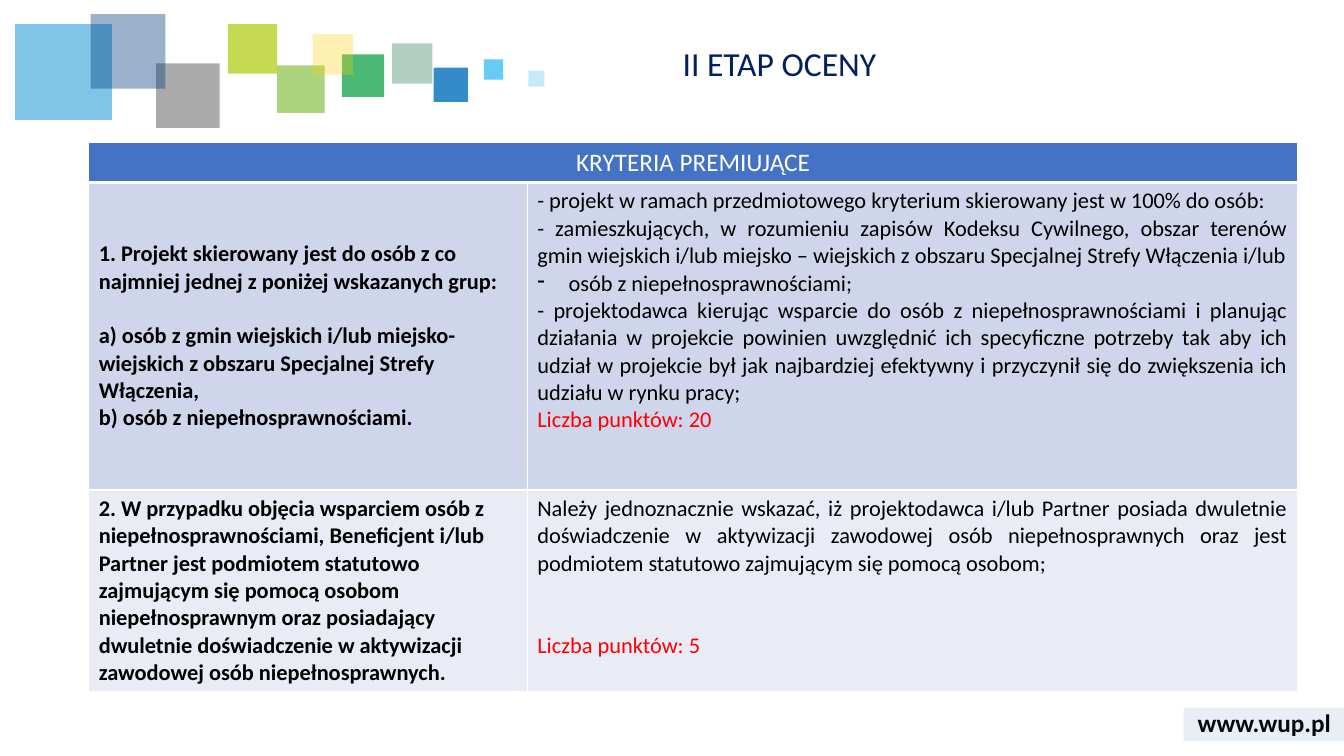
"""Build the slide on the bonus criteria of the second assessment stage."""
from dataclasses import dataclass

from lxml import etree
from pptx import Presentation
from pptx import util as u
from pptx.dml.color import RGBColor
from pptx.enum import shapes, text
from pptx.oxml import ns

FONT = "Calibri"
COLOURS = {
    "black": "000000", "white": "FFFFFF", "red": "FF0000", "title": "002060",
    "header": "4472C4", "band_dark": "CFD5EA", "band_light": "E9EBF5",
    "footer": "2F5597", "pine": "006138", "blue": "006EB9", "green": "009A3C",
    "azure": "028BD3", "leaf": "75B82A", "grey": "575757", "navy": "003D7C",
    "sky": "40C0F1", "lime": "AFCA0B", "yellow": "FED000",
}
LEFT, CENTER, JUSTIFY = text.PP_ALIGN.LEFT, text.PP_ALIGN.CENTER, text.PP_ALIGN.JUSTIFY
TOP, MIDDLE = text.MSO_ANCHOR.TOP, text.MSO_ANCHOR.MIDDLE
BLANK_LINE = 19.5


@dataclass
class Block:
    """A translucent rectangle, with lengths in inches and opacity in percent."""
    left: float
    top: float
    width: float
    height: float
    colour: str
    opacity: int


@dataclass
class Line:
    """A paragraph in one style."""
    words: str
    size: float = 16
    colour: str = "black"
    bold: bool = False
    align: text.PP_ALIGN = JUSTIFY
    before: float = 0
    spacing: float = 1.0
    bullet: str = ""


@dataclass
class Criterion:
    """A table row with its name, its explanation and its look."""
    height: float
    fill: str
    name: list[Line]
    details: list[Line]


BLOCKS = [
    Block(3.89, 0.43, 0.4, 0.4, "pine", 30),
    Block(4.3, 0.67, 0.34, 0.34, "blue", 80),
    Block(3.39, 0.54, 0.42, 0.42, "green", 70),
    Block(0.15, 0.24, 0.96, 0.95, "azure", 50),
    Block(2.75, 0.65, 0.47, 0.47, "leaf", 60),
    Block(1.55, 0.63, 0.63, 0.64, "grey", 50),
    Block(0.9, 0.14, 0.74, 0.74, "navy", 40),
    Block(4.8, 0.59, 0.19, 0.2, "sky", 80),
    Block(2.26, 0.24, 0.49, 0.49, "lime", 70),
    Block(3.1, 0.34, 0.4, 0.4, "yellow", 30),
    Block(5.24, 0.7, 0.16, 0.16, "sky", 30),
    Block(11.74, 7.02, 1.6, 0.33, "footer", 10),
]
CRITERIA = [
    Criterion(3.05, "band_dark", [
        Line("1. Projekt skierowany jest do osób z co najmniej jednej z poniżej "
             "wskazanych grup:", bold=True, align=LEFT),
        Line("a) osób z gmin wiejskich i/lub miejsko-wiejskich z obszaru Specjalnej "
             "Strefy Włączenia,", bold=True, align=LEFT, before=BLANK_LINE),
        Line("b) osób z niepełnosprawnościami.", bold=True, align=LEFT),
    ], [
        Line("- projekt w ramach przedmiotowego kryterium skierowany jest w 100% do osób:"),
        Line("- zamieszkujących, w rozumieniu zapisów Kodeksu Cywilnego, obszar terenów "
             "gmin wiejskich i/lub miejsko – wiejskich z obszaru Specjalnej Strefy "
             "Włączenia i/lub"),
        Line("osób z niepełnosprawnościami;", bullet="-"),
        Line("- projektodawca kierując wsparcie do osób z niepełnosprawnościami i planując "
             "działania w projekcie powinien uwzględnić ich specyficzne potrzeby tak aby "
             "ich udział w projekcie był jak najbardziej efektywny i przyczynił się do "
             "zwiększenia ich udziału w rynku pracy;"),
        Line("Liczba punktów: 20", colour="red"),
    ]),
    Criterion(2.0, "band_light", [
        Line("2. W przypadku objęcia wsparciem osób z niepełnosprawnościami, Beneficjent "
             "i/lub Partner jest podmiotem statutowo zajmującym się pomocą osobom "
             "niepełnosprawnym oraz posiadający dwuletnie doświadczenie w aktywizacji "
             "zawodowej osób niepełnosprawnych.", bold=True, align=LEFT),
    ], [
        Line("Należy jednoznacznie wskazać, iż projektodawca i/lub Partner posiada "
             "dwuletnie doświadczenie w aktywizacji zawodowej osób niepełnosprawnych oraz "
             "jest podmiotem statutowo zajmującym się pomocą osobom;"),
        Line("Liczba punktów: 5", colour="red", before=2 * BLANK_LINE),
    ]),
]


def rgb(name: str) -> RGBColor:
    """Return the named colour."""
    return RGBColor.from_string(COLOURS[name])


def write(frame, lines: list[Line], anchor: text.MSO_ANCHOR = TOP) -> None:
    """Write the lines into a text frame."""
    frame.word_wrap = True
    frame.vertical_anchor = anchor
    for index, line in enumerate(lines):
        paragraph = frame.add_paragraph() if index else frame.paragraphs[0]
        paragraph.alignment = line.align
        paragraph.line_spacing = line.spacing
        paragraph.space_before = u.Pt(line.before)
        if line.bullet:
            properties = paragraph._p.get_or_add_pPr()
            properties.set("marL", str(u.Inches(0.31)))
            properties.set("indent", str(u.Inches(-0.31)))
            etree.SubElement(properties, ns.qn("a:buChar"), char=line.bullet)
        run = paragraph.add_run()
        run.text = line.words
        run.font.name = FONT
        run.font.size = u.Pt(line.size)
        run.font.bold = line.bold
        run.font.color.rgb = rgb(line.colour)


def add_block(slide, block: Block) -> None:
    """Draw one translucent rectangle."""
    box = (u.Inches(n) for n in (block.left, block.top, block.width, block.height))
    shape = slide.shapes.add_shape(shapes.MSO_SHAPE.RECTANGLE, *box)
    shape.shadow.inherit = False
    shape.line.fill.background()
    shape.fill.solid()
    shape.fill.fore_color.rgb = rgb(block.colour)
    colour = shape.fill._xPr.find(".//" + ns.qn("a:srgbClr"))
    etree.SubElement(colour, ns.qn("a:alpha"), val=str(block.opacity * 1000))


def style_cell(cell, fill: str, bottom: float = 1) -> None:
    """Fill a cell and give it white borders."""
    cell.fill.solid()
    cell.fill.fore_color.rgb = rgb(fill)
    widths = {"lnL": 1, "lnR": 1, "lnT": 1, "lnB": bottom}
    for index, (side, width) in enumerate(widths.items()):
        border = etree.Element(ns.qn(f"a:{side}"), w=str(u.Pt(width)))
        solid = etree.SubElement(border, ns.qn("a:solidFill"))
        etree.SubElement(solid, ns.qn("a:srgbClr"), val=COLOURS["white"])
        cell._tc.get_or_add_tcPr().insert(index, border)


def add_criteria(slide, criteria: list[Criterion]) -> None:
    """Draw the table of criteria."""
    heights = [0.4] + [criterion.height for criterion in criteria]
    table = slide.shapes.add_table(
        len(heights), 2, u.Inches(0.88), u.Inches(1.41),
        u.Inches(11.99), u.Inches(sum(heights))).table
    table.first_row = table.horz_banding = False
    for column, width in zip(table.columns, (4.35, 7.64)):
        column.width = u.Inches(width)
    for row, height in zip(table.rows, heights):
        row.height = u.Inches(height)
    header = table.cell(0, 0)
    header.merge(table.cell(0, 1))
    write(header.text_frame, [Line("KRYTERIA PREMIUJĄCE", 18, "white", align=CENTER)])
    for cell in table.rows[0].cells:
        style_cell(cell, "header", bottom=3)
    for index, criterion in enumerate(criteria, start=1):
        columns = ((criterion.name, MIDDLE), (criterion.details, TOP))
        for cell, (lines, anchor) in zip(table.rows[index].cells, columns):
            write(cell.text_frame, lines)
            cell.vertical_anchor = anchor
            style_cell(cell, criterion.fill)


def main() -> None:
    """Build and save the presentation."""
    presentation = Presentation()
    presentation.slide_width, presentation.slide_height = u.Inches(13.33), u.Inches(7.5)
    slide = presentation.slides.add_slide(presentation.slide_layouts[5])
    title = slide.shapes.title
    title.left, title.top = u.Inches(6.67), u.Inches(0.42)
    title.width, title.height = u.Inches(6.36), u.Inches(0.55)
    write(title.text_frame, [Line("II ETAP OCENY", 24, "title", align=LEFT, spacing=0.9)])
    footer = slide.shapes.add_textbox(
        u.Inches(11.74), u.Inches(6.97), u.Inches(1.6), u.Inches(0.4))
    write(footer.text_frame, [Line("www.wup.pl", 18, bold=True, align=CENTER)], MIDDLE)
    for block in BLOCKS:
        add_block(slide, block)
    add_criteria(slide, CRITERIA)
    presentation.save("out.pptx")


if __name__ == "__main__":
    main()
